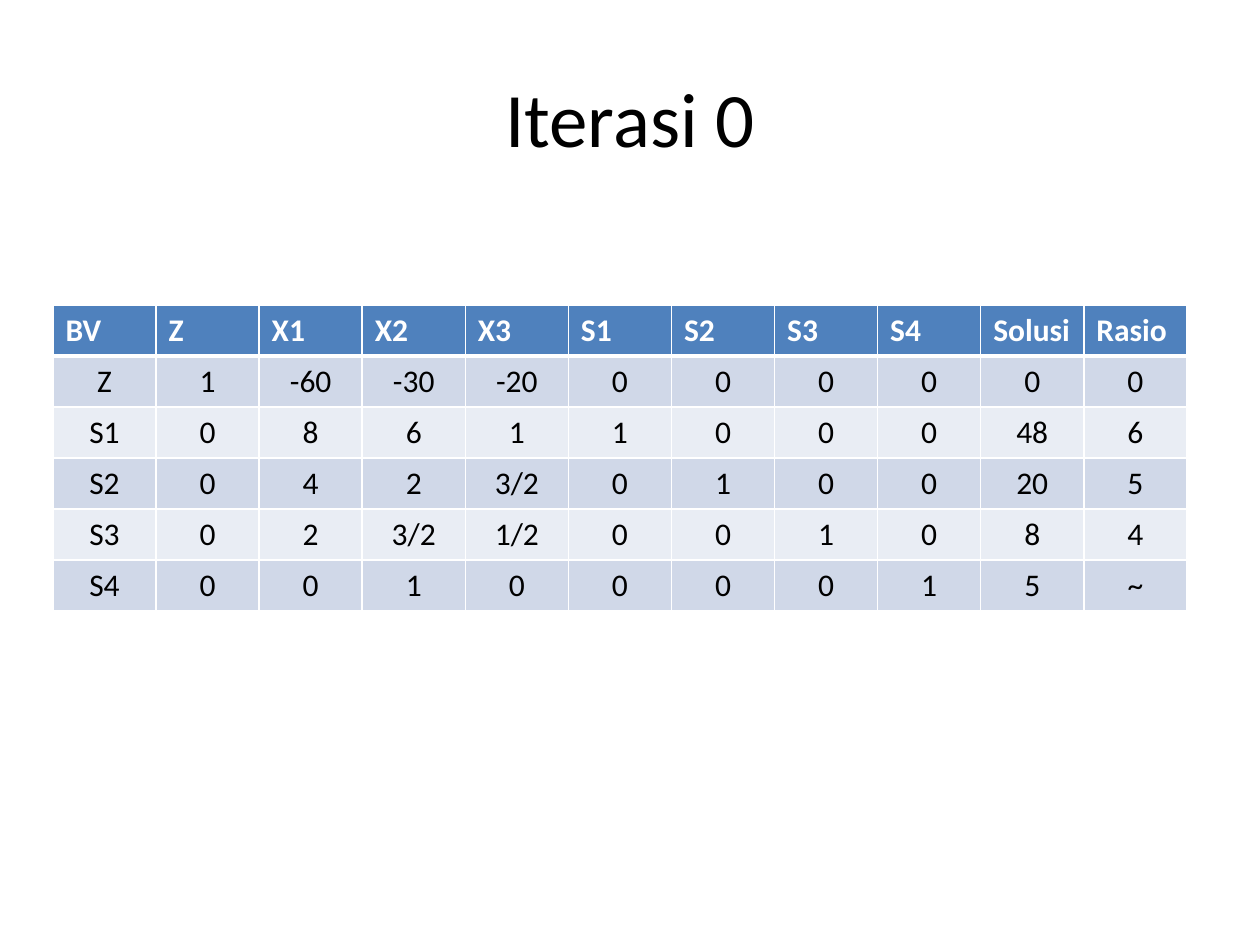
from pptx import Presentation
from pptx.dml.color import RGBColor
from pptx.enum.text import MSO_ANCHOR as Anchor, PP_ALIGN as Align
from pptx.oxml import parse_xml
from pptx.oxml.ns import nsdecls
from pptx.util import Pt

TITLE = "Iterasi 0"
HEAD = ["BV", "Z", "X1", "X2", "X3", "S1", "S2", "S3", "S4", "Solusi", "Rasio"]
BODY = [
    ["Z", "1", "-60", "-30", "-20", "0", "0", "0", "0", "0", "0"],
    ["S1", "0", "8", "6", "1", "1", "0", "0", "0", "48", "6"],
    ["S2", "0", "4", "2", "3/2", "0", "1", "0", "0", "20", "5"],
    ["S3", "0", "2", "3/2", "1/2", "0", "0", "1", "0", "8", "4"],
    ["S4", "0", "0", "1", "0", "0", "0", "0", "1", "5", "~"],
]
FONT = "Calibri"
BLUE, BANDS = "4F81BD", ("D0D8E8", "E9EDF4")
WHITE, BLACK = "FFFFFF", "000000"
PX = 914400 / 126


def px(n):
    """Turn pixels into EMU."""
    return round(n * PX)


def rgb(code):
    """Turn a hex string into a colour."""
    return RGBColor.from_string(code)


def style(para, size, color, align, bold=False):
    """Format a paragraph and its runs."""
    para.alignment = align
    for run in para.runs:
        font = run.font
        font.name, font.size, font.bold = FONT, Pt(size), bold
        font.color.rgb = rgb(color)


def edge(cell, side, width):
    """Give one side of a cell a white line."""
    cell._tc.get_or_add_tcPr().append(parse_xml(
        f'<a:ln{side} {nsdecls("a")} w="{Pt(width)}"><a:solidFill>'
        f'<a:srgbClr val="{WHITE}"/></a:solidFill></a:ln{side}>'))


def add_title(slide):
    """Add the centred title."""
    box = slide.shapes.add_textbox(px(63), px(38), px(1134), px(157))
    frame = box.text_frame
    frame.word_wrap = True
    frame.vertical_anchor = Anchor.MIDDLE
    frame.text = TITLE
    style(frame.paragraphs[0], 44, BLACK, Align.CENTER)


def add_grid(slide):
    """Add the simplex table with its banded rows."""
    rows = [HEAD] + BODY
    wide, row_h = 1134, 51
    table = slide.shapes.add_table(
        len(rows), len(HEAD), px(53), px(305), px(wide), px(row_h * len(rows))).table
    for col in table.columns:
        col.width = px(wide / len(HEAD))
    for r, row in enumerate(rows):
        table.rows[r].height = px(row_h)
        top = r == 0
        fill = BLUE if top else BANDS[(r - 1) % 2]
        for c, text in enumerate(row):
            cell = table.cell(r, c)
            cell.text = text
            style(cell.text_frame.paragraphs[0], 18, WHITE if top else BLACK,
                  Align.LEFT if top else Align.CENTER, top)
            for side in "LRTB":
                thick = (top and side == "B") or (r == 1 and side == "T")
                edge(cell, side, 3 if thick else 1)
            cell.fill.solid()
            cell.fill.fore_color.rgb = rgb(fill)


def main():
    """Build the slide and save it."""
    deck = Presentation()
    deck.slide_width, deck.slide_height = px(1260), px(945)
    slide = deck.slides.add_slide(deck.slide_layouts[6])
    add_title(slide)
    add_grid(slide)
    deck.save("out.pptx")


if __name__ == "__main__":
    main()
